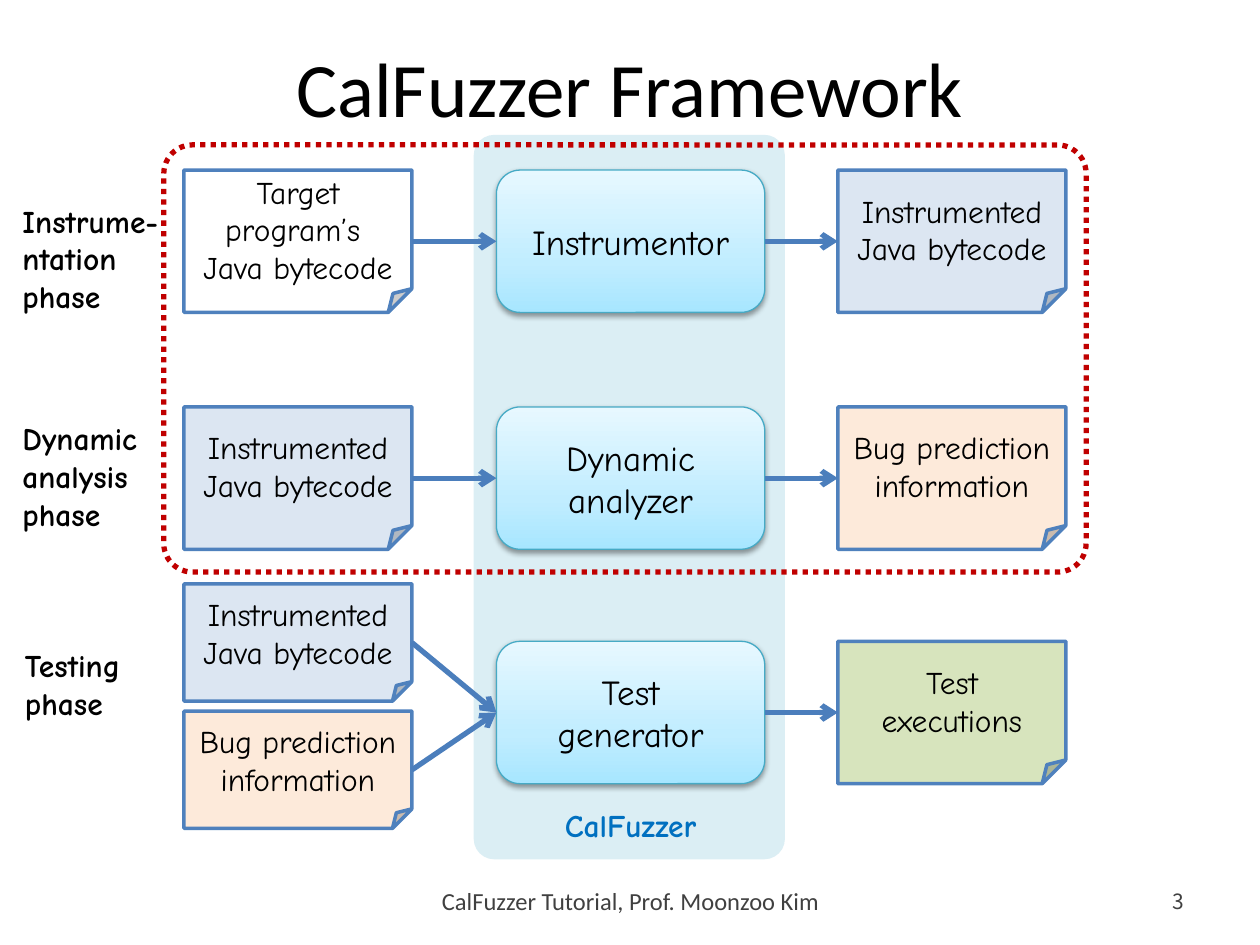
from pptx import Presentation
from pptx.dml.color import RGBColor
from pptx.enum import dml, shapes, text
from pptx.oxml import parse_xml
from pptx.oxml.ns import nsdecls, qn
from pptx.util import Inches, Pt

# Content
TITLE = "CalFuzzer Framework"
FOOTER = "CalFuzzer Tutorial, Prof. Moonzoo Kim"
PAGE = "3"
BAND = "CalFuzzer"
BYTECODE = ("Instrumented\nJava bytecode", "blue")
BUGS = ("Bug prediction\ninformation", "orange")
PHASES = [
    dict(label="Instrume-\nntation\nphase", label_at=(0.08, 1.55, 1.01), top=1.35,
         inputs=[("Target program’s \vJava bytecode", "white")],
         step="Instrumentor", output=BYTECODE),
    dict(label="Dynamic\nanalysis\nphase", label_at=(0.08, 3.28, 1.01), top=3.23,
         inputs=[BYTECODE], step="Dynamic\nanalyzer", output=BUGS),
    dict(label="Testing\nphase", label_at=(0.1, 5.08, 0.71), top=5.09,
         inputs=[BYTECODE, BUGS], step="Test\ngenerator",
         output=("Test\nexecutions", "green")),
]

# Theme
THEME = dict(
    title=dict(name="Calibri", size=44, color="000000"),
    footer=dict(name="Calibri", size=14, color="404040"),
    page=dict(name="Noto Sans CJK KR", size=12, color="404040"),
    doc=dict(name="Comic Neue", size=18, color="000000"),
    step=dict(name="Comic Neue", size=20, color="000000"),
    label=dict(name="Comic Neue", size=18, color="000000", bold=True),
    band=dict(name="Comic Neue", size=18, color="0070C0", bold=True),
    fills=dict(white="FFFFFF", blue="DCE6F2", orange="FDEADA", green="D7E4BD",
               band="DBEEF4"),
    lines=dict(doc=("4F81BD", 2), step=("46AAC5", 0.75), arrow=("4B7EBC", 3),
               frame=("C00000", 3)),
    gradient=[(0, "A7E6FF"), (35, "C1EDFF"), (100, "E7F8FF")],
)

# Grid, in inches
DOC_W, STEP_W, ROW_H = 1.81, 2.13, 1.13
INPUT_X, STEP_X, OUTPUT_X = 1.46, 3.94, 6.65
SMALL_H, SMALL_GAP = 0.93, 0.08

SHAPE = shapes.MSO_SHAPE
CENTER, LEFT, RIGHT = (text.PP_ALIGN.CENTER, text.PP_ALIGN.LEFT,
                       text.PP_ALIGN.RIGHT)
MIDDLE, TOP = text.MSO_ANCHOR.MIDDLE, text.MSO_ANCHOR.TOP


def rgb(value):
    return RGBColor.from_string(value)


def write(sp, words, style, align=CENTER, anchor=MIDDLE):
    tf = sp.text_frame
    tf.text = words
    tf.word_wrap = True
    tf.vertical_anchor = anchor
    for p in tf.paragraphs:
        p.alignment = align
        for r in p.runs:
            for key, value in THEME[style].items():
                if key == "color":
                    r.font.color.rgb = rgb(value)
                else:
                    setattr(r.font, key, Pt(value) if key == "size" else value)
    return tf


def set_line(line, name):
    color, width = THEME["lines"][name]
    line.color.rgb = rgb(color)
    line.width = Pt(width)


def add_box(slide, kind, at, fill=None, line=None, adj=None):
    sp = slide.shapes.add_shape(kind, *map(Inches, at))
    sp.shadow.inherit = False
    if fill:
        sp.fill.solid()
        sp.fill.fore_color.rgb = rgb(THEME["fills"][fill])
    else:
        sp.fill.background()
    if line:
        set_line(sp.line, line)
    else:
        sp.line.fill.background()
    if adj is not None:
        sp.adjustments[0] = adj
    return sp


def add_doc(slide, x, y, height, words, fill):
    sp = add_box(slide, SHAPE.FOLDED_CORNER, (x, y, DOC_W, height), fill, "doc")
    tf = write(sp, words, "doc")
    for side, inset in dict(left=0.04, top=0.05, right=0.04, bottom=0.05).items():
        setattr(tf, f"margin_{side}", Inches(inset))
    return sp


def add_step(slide, y, words):
    sp = add_box(slide, SHAPE.ROUNDED_RECTANGLE, (STEP_X, y, STEP_W, ROW_H),
                 line="step")
    # Three-stop gradient and soft shadow
    stops = "".join(f'<a:gs pos="{pos * 1000}"><a:srgbClr val="{color}"/></a:gs>'
                    for pos, color in THEME["gradient"])
    props = sp.element.spPr
    props.replace(props.find(qn("a:noFill")), parse_xml(
        f'<a:gradFill {nsdecls("a")} rotWithShape="1"><a:gsLst>{stops}</a:gsLst>'
        '<a:lin ang="16200000" scaled="0"/></a:gradFill>'))
    props.find(qn("a:effectLst")).append(parse_xml(
        f'<a:outerShdw {nsdecls("a")} blurRad="{Pt(3.1)}" dist="{Pt(1.6)}" '
        'dir="5400000" rotWithShape="0"><a:srgbClr val="000000">'
        '<a:alpha val="38000"/></a:srgbClr></a:outerShdw>'))
    write(sp, words, "step")
    return sp


def add_arrow(slide, start, end):
    c = slide.shapes.add_connector(shapes.MSO_CONNECTOR.STRAIGHT, 0, 0, 0, 0)
    c.begin_connect(start, 3)
    c.end_connect(end, 1)
    set_line(c.line, "arrow")
    c.line._get_or_add_ln().append(
        parse_xml(f'<a:tailEnd {nsdecls("a")} type="arrow"/>'))
    c.element.spPr.append(parse_xml(f'<a:effectLst {nsdecls("a")}/>'))


def add_text(slide, at, words, style, align=CENTER, anchor=MIDDLE):
    sp = slide.shapes.add_textbox(*map(Inches, at))
    tf = write(sp, words, style, align, anchor)
    if anchor == TOP:
        tf.auto_size = text.MSO_AUTO_SIZE.SHAPE_TO_FIT_TEXT


def add_phase(slide, phase):
    top, inputs = phase["top"], phase["inputs"]
    if len(inputs) == 1:
        height, first = ROW_H, top
    else:  # stacked inputs are centred on the row
        height = SMALL_H
        stack = len(inputs) * (SMALL_H + SMALL_GAP) - SMALL_GAP
        first = top + (ROW_H - stack) / 2 - 0.05
    step = add_step(slide, top, phase["step"])
    output = add_doc(slide, OUTPUT_X, top, ROW_H, *phase["output"])
    for i, item in enumerate(inputs):
        doc = add_doc(slide, INPUT_X, first + i * (height + SMALL_GAP), height, *item)
        add_arrow(slide, doc, step)
    add_arrow(slide, step, output)
    x, y, h = phase["label_at"]
    add_text(slide, (x, y, 1.5, h), phase["label"], "label", LEFT, TOP)


def main():
    prs = Presentation()
    prs.slide_width, prs.slide_height = Inches(10), Inches(7.5)
    slide = prs.slides.add_slide(prs.slide_layouts[5])

    # Tool band lies behind everything, title included
    band = add_box(slide, SHAPE.ROUNDED_RECTANGLE, (3.76, 1.07, 2.47, 5.75),
                   "band", adj=0.066)
    title = slide.shapes.title
    title.element.addprevious(band.element)
    title.left, title.top, title.width, title.height = map(
        Inches, (0.5, 0.06, 9, 1.25))
    write(title, TITLE, "title")

    # Footer
    add_text(slide, (1.61, 6.95, 6.79, 0.4), FOOTER, "footer")
    add_text(slide, (8.94, 6.95, 0.56, 0.4), PAGE, "page", RIGHT)

    # Phases, band caption and highlighted region
    for phase in PHASES:
        add_phase(slide, phase)
    add_text(slide, (STEP_X, 6.35, STEP_W, 0.4), BAND, "band", anchor=TOP)
    frame = add_box(slide, SHAPE.ROUNDED_RECTANGLE, (1.3, 1.15, 7.32, 3.39),
                    line="frame", adj=0.067)
    frame.line.dash_style = dml.MSO_LINE.ROUND_DOT

    prs.save("out.pptx")


if __name__ == "__main__":
    main()
